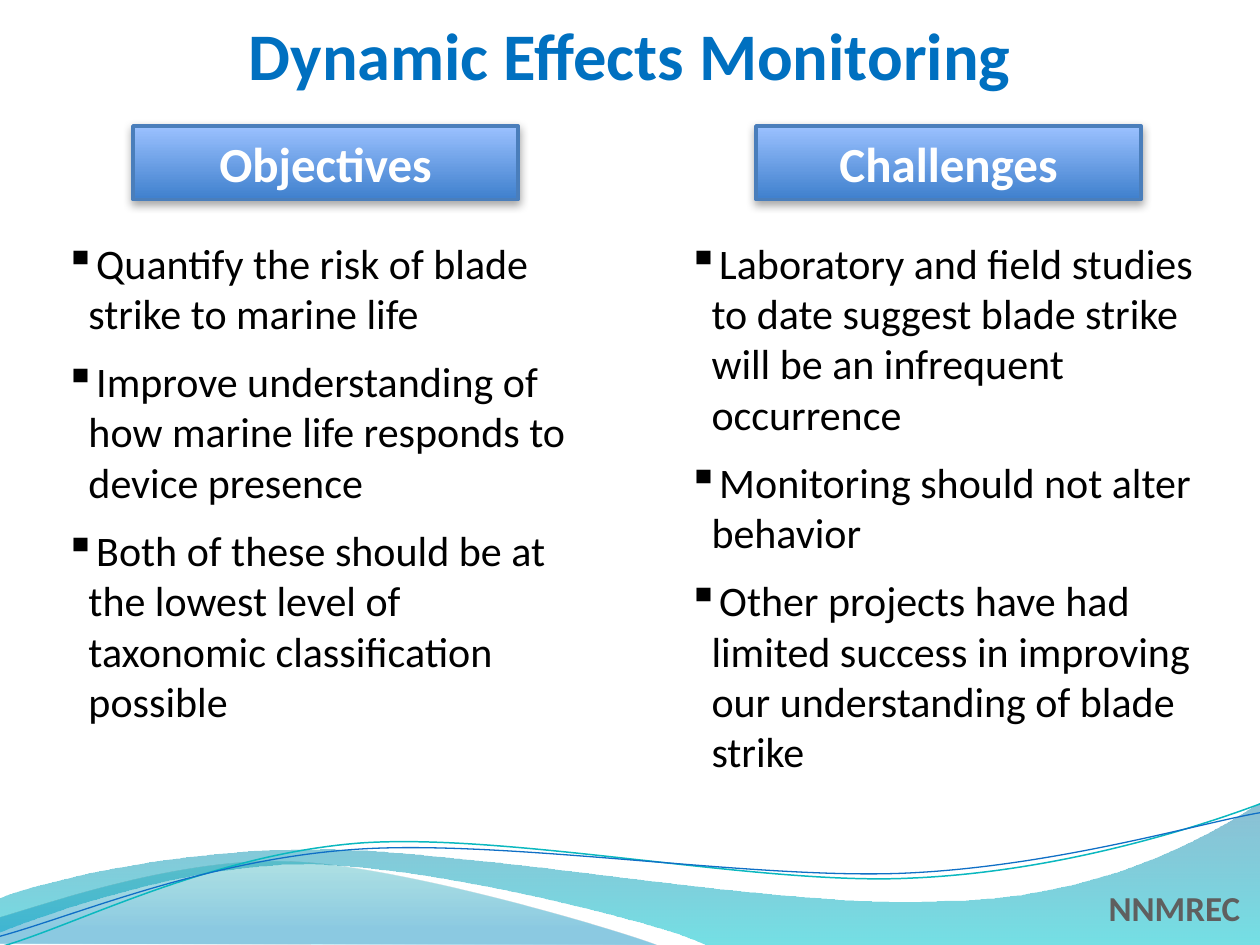
"""Build the Dynamic Effects Monitoring slide: two bulleted columns above a wave footer."""
from dataclasses import dataclass

from lxml import etree
from pptx import Presentation
from pptx import util as u
from pptx.dml.color import RGBColor
from pptx.enum import shapes, text
from pptx.oxml import parse_xml
from pptx.oxml.ns import nsdecls, qn


@dataclass(frozen=True)
class Theme:
    font: str = "Calibri"
    title: str = "0070C0"
    body: str = "000000"
    header: str = "FFFFFF"
    footer: str = "5F5F5F"
    header_line: str = "4A7EBB"
    header_stops: tuple = ((0, "3F80CD", 100), (100, "9BC1FF", 100))
    back_wave: tuple = ((0, "0074A1", 45), (100, "00C6CF", 55))
    front_wave: tuple = ((0, "00A1A9", 30), (80, "008BBF", 45))
    teal_line: str = "0AB8BF"
    blue_line: str = "0F6FC6"
    title_size: int = 38
    header_size: int = 28
    body_size: int = 24
    footer_size: int = 20


def style_text(paragraph, size, color, bold=False):
    for run in paragraph.runs:
        run.font.name = theme.font
        run.font.size = u.Pt(size)
        run.font.bold = bold
        run.font.color.rgb = RGBColor.from_string(color)


def fill_gradient(shape, stops, angle):
    shape.fill.background()
    stop_xml = "".join(
        f'<a:gs pos="{pos * 1000}"><a:srgbClr val="{color}">'
        f'<a:alpha val="{alpha * 1000}"/></a:srgbClr></a:gs>'
        for pos, color, alpha in stops
    )
    properties = shape._element.spPr
    properties.replace(
        properties.find(qn("a:noFill")),
        parse_xml(
            f'<a:gradFill rotWithShape="1" {nsdecls("a")}><a:gsLst>{stop_xml}</a:gsLst>'
            f'<a:lin ang="{angle * 60000}" scaled="0"/></a:gradFill>'
        ),
    )


theme = Theme()
deck = Presentation()
deck.slide_width, deck.slide_height = u.Pt(720), u.Pt(540)
slide = deck.slides.add_slide(deck.slide_layouts[6])

waves = [
    ((720, 540), [
        [(403.2, 540)],
        [(377.3, 527), (241.9, 493.9), (173.5, 493.9)],
        [(105.8, 493.9), (29.5, 521.3), (0, 532.8)],
        [(-0.7, 513.4)],
        [(11.5, 507.6), (93.6, 484.6), (182.9, 485.3)],
        [(272.2, 485.3), (445, 519.1), (535, 514.8)],
        [(627.1, 514.1), (686.9, 479.5), (720.7, 457.9)],
    ], theme.back_wave, None, 0),
    ((375.1, 540), [
        [(352.8, 531.4), (229, 494.6), (166.3, 492.5)],
        [(103.7, 489.6), (27.4, 516.2), (0, 524.2)],
        [(0, 539.3)],
    ], theme.front_wave, None, 0),
    ((720, 459.4), [
        [(685.4, 472.3), (606.2, 498.2), (520.6, 501.8)],
        [(434.9, 506.2), (293, 475.9), (206.6, 481.7)],
        [(120.2, 488.2), (43.9, 528.5), (1.4, 540.7)],
    ], None, theme.teal_line, 0.85),
    ((720, 464.4), [
        [(686.2, 470.2), (601.9, 495.4), (516.2, 499)],
        [(429.8, 502.6), (289.4, 479.5), (203.8, 485.3)],
        [(118.1, 491), (42.5, 523.4), (0, 535)],
    ], None, theme.blue_line, 0.75),
]
for (start_x, start_y), segments, stops, line_color, line_width in waves:
    builder = slide.shapes.build_freeform(u.Pt(start_x), u.Pt(start_y))
    builder.add_line_segments(
        [(u.Pt(x), u.Pt(y)) for segment in segments for x, y in segment],
        close=stops is not None,
    )
    wave = builder.convert_to_shape()
    wave.shadow.inherit = False
    steps = iter(list(wave._element.spPr.iter(qn("a:lnTo"))))
    for segment in segments:
        first, *rest = [next(steps) for _ in segment]
        if rest:
            first.tag = qn("a:cubicBezTo")
            for step in rest:
                first.append(step[0])
                step.getparent().remove(step)
    if stops:
        fill_gradient(wave, stops, 90)
        wave.line.fill.background()
    else:
        wave.fill.background()
        wave.line.color.rgb = RGBColor.from_string(line_color)
        wave.line.width = u.Pt(line_width)

footer = slide.shapes.add_textbox(u.Pt(626.4), u.Pt(503.3), u.Pt(90), u.Pt(31.7)).text_frame
footer.word_wrap = False
footer.text = "NNMREC"
style_text(footer.paragraphs[0], theme.footer_size, theme.footer, bold=True)

title = slide.shapes.add_textbox(0, u.Pt(8), u.Pt(720), u.Pt(46)).text_frame
title.word_wrap = True
title.margin_left = title.margin_right = title.margin_top = title.margin_bottom = 0
title.text = "Dynamic Effects Monitoring"
title.paragraphs[0].alignment = text.PP_ALIGN.CENTER
style_text(title.paragraphs[0], theme.title_size, theme.title, bold=True)

columns = [
    ("Objectives", 30, 289.5, [
        "Quantify the risk of blade strike to marine life",
        "Improve understanding of how marine life responds to device presence",
        "Both of these should be at the lowest level of taxonomic classification possible",
    ]),
    ("Challenges", 386, 318, [
        "Laboratory and field studies to date suggest blade strike will be an infrequent occurrence",
        "Monitoring should not alter behavior",
        "Other projects have had limited success in improving our understanding of blade strike",
    ]),
]
for heading, left, height, points in columns:
    body = slide.shapes.add_textbox(u.Pt(left), u.Pt(132), u.Pt(312), u.Pt(height)).text_frame
    body.word_wrap = True
    body.text = "\n".join(points)
    for point in body.paragraphs:
        point.space_after = u.Pt(10)
        properties = point._p.get_or_add_pPr()
        properties.set("marL", str(u.Pt(13.5)))
        properties.set("indent", str(u.Pt(-13.5)))
        etree.SubElement(properties, qn("a:buChar")).set("char", "▪")
        style_text(point, theme.body_size, theme.body)

    header = slide.shapes.add_shape(
        shapes.MSO_SHAPE.RECTANGLE, u.Pt(left + 46), u.Pt(72), u.Pt(220), u.Pt(42))
    fill_gradient(header, theme.header_stops, 270)
    header.line.color.rgb = RGBColor.from_string(theme.header_line)
    header.line.width = u.Pt(2)
    header.shadow.inherit = False
    header._element.spPr.find(qn("a:effectLst")).append(parse_xml(
        f'<a:outerShdw blurRad="{u.Pt(5)}" dist="{u.Pt(1.8)}" dir="5400000" '
        f'rotWithShape="0" {nsdecls("a")}><a:srgbClr val="000000">'
        '<a:alpha val="35000"/></a:srgbClr></a:outerShdw>'
    ))
    header.text_frame.text = heading
    header.text_frame.vertical_anchor = text.MSO_ANCHOR.MIDDLE
    header.text_frame.paragraphs[0].alignment = text.PP_ALIGN.CENTER
    style_text(header.text_frame.paragraphs[0], theme.header_size, theme.header, bold=True)

deck.save("out.pptx")
